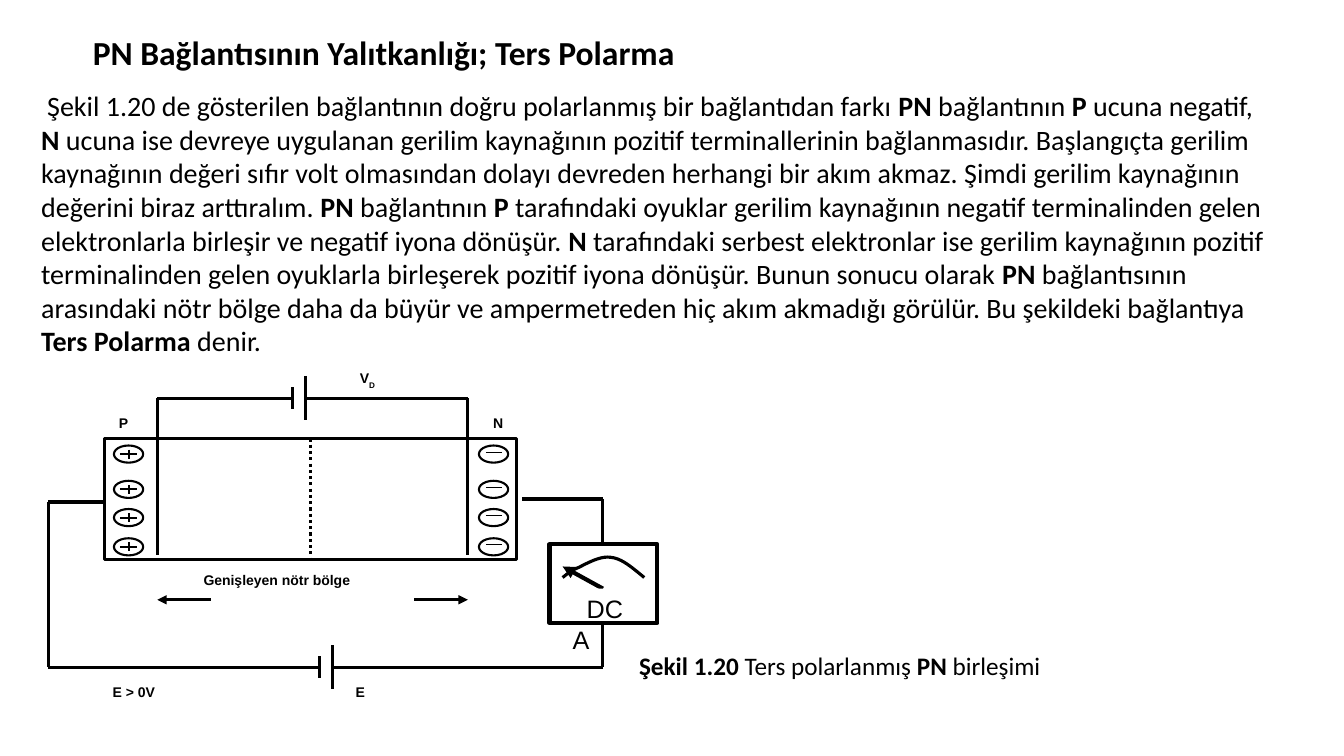
from pptx import Presentation, util as u
from pptx.dml import color
from pptx.enum import dml, shapes, text
from pptx.oxml import ns
from lxml import etree

TITLE = "*PN Bağlantısının Yalıtkanlığı; Ters Polarma*"
BODY = (
    "Şekil 1.20 de gösterilen bağlantının doğru polarlanmış bir bağlantıdan farkı "
    "*PN *bağlantının *P *ucuna negatif, *N *ucuna ise devreye uygulanan gerilim "
    "kaynağının pozitif terminallerinin bağlanmasıdır. Başlangıçta gerilim kaynağının "
    "değeri sıfır volt olmasından dolayı devreden herhangi bir akım akmaz. Şimdi gerilim "
    "kaynağının değerini biraz arttıralım. *PN *bağlantının *P *tarafındaki oyuklar "
    "gerilim kaynağının negatif terminalinden gelen elektronlarla birleşir ve negatif "
    "iyona dönüşür. *N *tarafındaki serbest elektronlar ise gerilim kaynağının pozitif "
    "terminalinden gelen oyuklarla birleşerek pozitif iyona dönüşür. Bunun sonucu olarak "
    "*PN *bağlantısının arasındaki nötr bölge daha da büyür ve ampermetreden hiç akım "
    "akmadığı görülür. Bu şekildeki bağlantıya *Ters Polarma *denir."
)
CAPTION = "*Şekil 1.20 *Ters polarlanmış *PN *birleşimi"
INK, PAPER = "000000", "FFFFFF"
LEFT, MID, RIGHT = text.PP_ALIGN.LEFT, text.PP_ALIGN.CENTER, text.PP_ALIGN.RIGHT


def cell(n):
    return u.Inches(n / 10)


def tint(code):
    return color.RGBColor.from_string(code)


class Board:
    def __init__(self, slide):
        self.slide = slide
        self.home = slide.shapes
        self.frame = {
            "word_wrap": True,
            "auto_size": text.MSO_AUTO_SIZE.NONE,
            "vertical_anchor": text.MSO_ANCHOR.TOP,
        }

    def group(self):
        self.home = self.slide.shapes.add_group_shape().shapes

    def leave(self):
        self.home = self.slide.shapes

    def letter(self, para, words, size, face, bold):
        run = para.add_run()
        run.text = words
        style = {"size": u.Pt(size), "name": face, "bold": bold}
        for name, value in style.items():
            setattr(run.font, name, value)
        run.font.color.rgb = tint(INK)
        return run

    def phrase(self, shape, words, size, face, align=LEFT, indent=0):
        frame = shape.text_frame
        for name, value in self.frame.items():
            setattr(frame, name, value)
        para = frame.paragraphs[0]
        para.alignment = align
        if indent:
            para._p.get_or_add_pPr().set("indent", str(cell(indent)))
        for spot, part in enumerate(words.split("*")):
            if part:
                self.letter(para, part, size, face, spot % 2 == 1)
        return para

    def title(self, area, words, size):
        shape = self.slide.shapes.title
        for name, value in zip(("left", "top", "width", "height"), area):
            setattr(shape, name, cell(value))
        self.phrase(shape, words, size, "Calibri")

    def prose(self, area, words, size, indent=0):
        shape = self.home.add_textbox(*map(cell, area))
        self.phrase(shape, words, size, "Calibri", indent=indent)

    def block(self, area, weight=0, kind=shapes.MSO_SHAPE.RECTANGLE):
        shape = self.home.add_shape(kind, *map(cell, area))
        shape.shadow.inherit = False
        shape.fill.solid()
        shape.fill.fore_color.rgb = tint(PAPER)
        if weight:
            shape.line.color.rgb = tint(INK)
            shape.line.width = u.Pt(weight)
        else:
            shape.line.fill.background()
        return shape

    def label(self, area, words, align=LEFT, indent=0, size=10):
        return self.phrase(self.block(area), words, size, "Arial", align, indent)

    def wire(self, x, y, to_x, to_y, weight=2.25, arrow=False, dots=False):
        line = self.home.add_connector(
            shapes.MSO_CONNECTOR.STRAIGHT, *map(cell, (x, y, to_x, to_y)))
        line.line.color.rgb = tint(INK)
        line.line.width = u.Pt(weight)
        if dots:
            line.line.dash_style = dml.MSO_LINE.ROUND_DOT
        props = line._element.spPr
        if arrow:
            etree.SubElement(props.get_or_add_ln(), ns.qn("a:tailEnd"), type="triangle")
        etree.SubElement(props, ns.qn("a:effectLst"))

    def route(self, *stops):
        for start, end in zip(stops, stops[1:]):
            self.wire(*start, *end)

    def curve(self, start, arcs, weight, steps=10):
        dots, here = [], start
        for one, two, end in arcs:
            for step in range(1, steps + 1):
                t = step / steps
                share = ((1 - t) ** 3, 3 * t * (1 - t) ** 2, 3 * t * t * (1 - t), t ** 3)
                dots.append(tuple(
                    cell(sum(k * p[axis] for k, p in zip(share, (here, one, two, end))))
                    for axis in (0, 1)))
            here = end
        pen = self.home.build_freeform(cell(start[0]), cell(start[1]))
        pen.add_line_segments(dots, close=False)
        shape = pen.convert_to_shape()
        shape.shadow.inherit = False
        shape.fill.background()
        shape.line.color.rgb = tint(INK)
        shape.line.width = u.Pt(weight)

    def ion(self, x, y, plus):
        self.block((x, y, 2.9, 1.7), 1.5, shapes.MSO_SHAPE.OVAL)
        if plus:
            self.wire(x + 1.5, y + 0.4, x + 1.5, y + 1.3, 1.5)
            self.wire(x + 0.6, y + 0.85, x + 2.3, y + 0.85, 1.5)
        else:
            self.wire(x + 0.7, y + 0.65, x + 2.3, y + 0.65, 0.75)

    def source(self, x, y):
        self.wire(x, y - 1.1, x, y + 1.1)
        self.wire(x + 1.3, y - 2.2, x + 1.3, y + 2.2)


def main():
    deck = Presentation()
    deck.slide_width, deck.slide_height = u.Inches(13.33), u.Inches(7.5)
    board = Board(deck.slides.add_slide(deck.slide_layouts[5]))
    board.title((8.2, 2.7, 114.1, 5.5), TITLE, 24)

    board.group()
    volt = board.label((32.4, 36.2, 8.1, 4.1), "*V*", MID)
    sub = board.letter(volt, "D", 10, "Arial", True)
    sub._r.get_or_add_rPr().set("baseline", "-30000")

    board.block((10.4, 43.5, 40.8, 12), 2.25)
    board.label((10.8, 40.6, 14.1, 2.6), "*P*")
    board.label((37.3, 40.6, 13.6, 2.6), "*N*", RIGHT)
    for y in (44.2, 47.7, 50.5, 53.4):
        board.ion(11.3, y, True)
        board.ion(47.5, y, False)
    board.wire(30.8, 43.5, 30.8, 55.5, dots=True)

    board.source(29, 39.5)
    board.route((29, 39.5), (15.6, 39.5), (15.6, 55.1))
    board.route((30.3, 39.5), (46.4, 39.5), (46.4, 55.1))

    board.block((54.5, 54, 10.7, 7.8), 3)
    board.curve((55.8, 57.3), (
        ((56.2, 57), (56.6, 56.6), (57.4, 56.3)),
        ((58.2, 55.9), (59.6, 55.1), (60.6, 55.3)),
        ((61.7, 55.4), (62.8, 56.4), (63.9, 57.3))), 2.25)
    board.wire(59.8, 58.4, 55.8, 56.2, 3, arrow=True)
    board.label((55.8, 58.4, 8.1, 2.2), "DC A", indent=1.4, size=18)

    board.source(31.7, 66.2)
    board.route((10.4, 49.8), (4.8, 49.8), (4.8, 66.2), (31.7, 66.2))
    board.route((51.8, 49.5), (59.8, 49.5), (59.8, 54))
    board.route((59.8, 61.8), (59.8, 66.2), (33, 66.2))
    board.label((34.3, 67.3, 5.4, 3.3), "*E*")
    board.label((10.2, 67.3, 9.4, 3.3), "*E > 0V*")
    board.label((16.9, 56.2, 29.5, 4.5), "*Genişleyen nötr bölge*", indent=2.3)
    for tail, tip in ((41.1, 46.4), (20.9, 15.6)):
        board.wire(tail, 59.5, tip, 59.5, arrow=True)

    board.leave()
    board.prose((3.1, 8.3, 123.4, 31), BODY, 20, indent=0.6)
    board.prose((62.4, 64, 66.5, 7.1), CAPTION, 18)
    deck.save("out.pptx")


if __name__ == "__main__":
    main()
